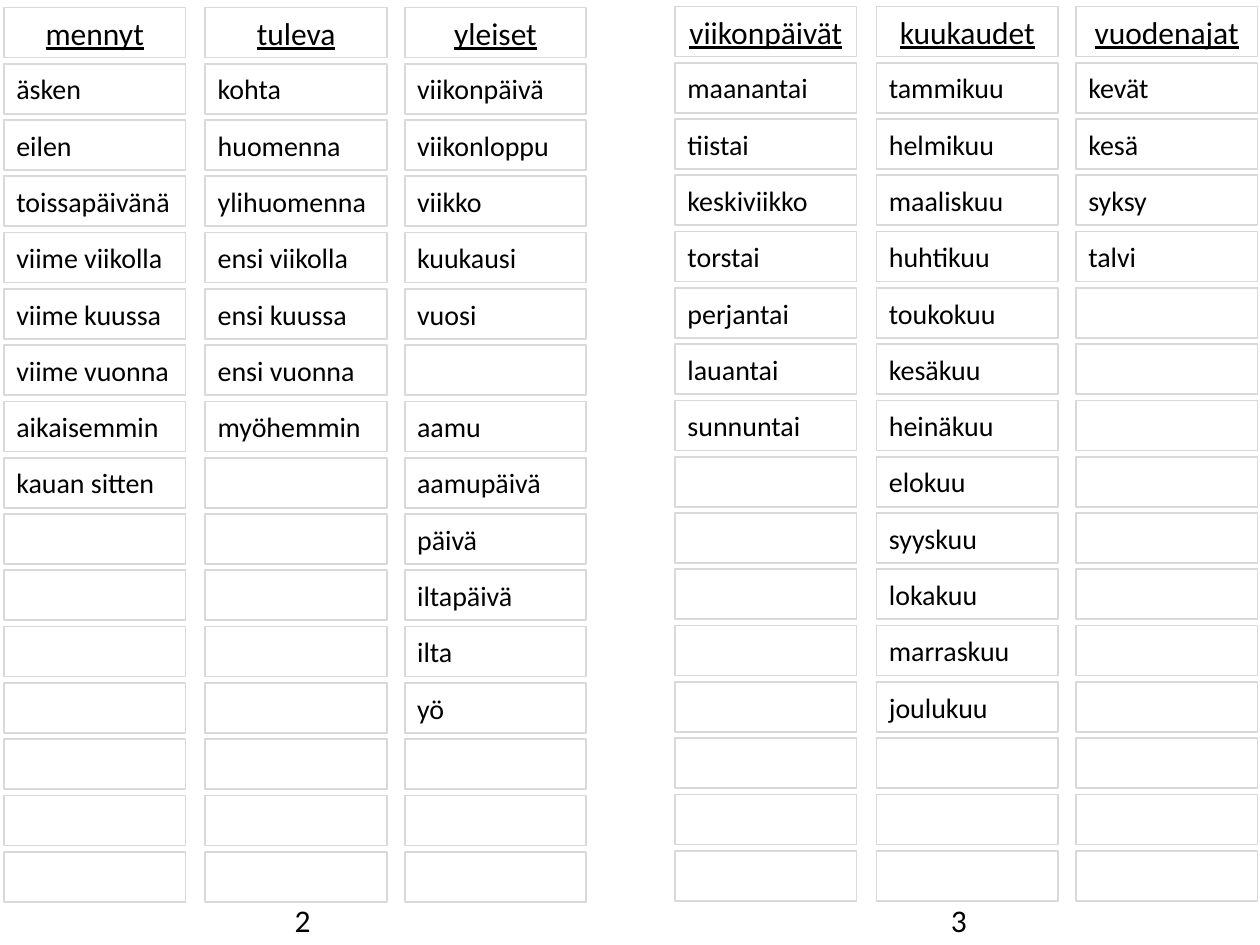
"""Build a Finnish time vocabulary slide as two pages of word cards."""
from pptx import Presentation
from pptx import util as u
from pptx.dml import color
from pptx.enum import shapes, text

ROWS = 16
ROW_PITCH = 17.02 / (ROWS - 1)
CARD_WIDTH, CARD_HEIGHT = 3.66, 1.01
COLUMN_OFFSETS = (0, 4.06, 8.08)
HEADING = {"size": u.Pt(18), "underline": True}
WORD = {"size": u.Pt(16)}
PAGE_NUMBER = {"size": u.Pt(18)}

PAGES = [
    {"left": 0.08, "top": 0.15, "number": "2", "number_left": 5.69, "columns": [
        ["mennyt", "äsken", "eilen", "toissapäivänä", "viime viikolla",
         "viime kuussa", "viime vuonna", "aikaisemmin", "kauan sitten"],
        ["tuleva", "kohta", "huomenna", "ylihuomenna", "ensi viikolla",
         "ensi kuussa", "ensi vuonna", "myöhemmin"],
        ["yleiset", "viikonpäivä", "viikonloppu", "viikko", "kuukausi",
         "vuosi", "", "aamu", "aamupäivä", "päivä", "iltapäivä", "ilta", "yö"],
    ]},
    {"left": 13.61, "top": 0.13, "number": "3", "number_left": 18.92, "columns": [
        ["viikonpäivät", "maanantai", "tiistai", "keskiviikko", "torstai",
         "perjantai", "lauantai", "sunnuntai"],
        ["kuukaudet", "tammikuu", "helmikuu", "maaliskuu", "huhtikuu",
         "toukokuu", "kesäkuu", "heinäkuu", "elokuu", "syyskuu", "lokakuu",
         "marraskuu", "joulukuu"],
        ["vuodenajat", "kevät", "kesä", "syksy", "talvi"],
    ]},
]


def rgb(value):
    """Return a colour from its hex string."""
    return color.RGBColor.from_string(value)


def write(frame, wording, style, alignment):
    """Put one formatted line of text into a frame."""
    line = frame.paragraphs[0]
    line.alignment = alignment
    run = line.add_run()
    run.text = wording
    run.font.color.rgb = rgb("000000")
    for attribute, value in {"name": "Calibri", **style}.items():
        setattr(run.font, attribute, value)


def format_card(card, wording, is_heading):
    """Outline a card and write its word, if it has one."""
    card.fill.background()
    card.line.color.rgb = rgb("D9D9D9")
    card.line.width = u.Pt(1)
    frame = card.text_frame
    frame_format = {"word_wrap": True, "auto_size": text.MSO_AUTO_SIZE.NONE,
                    "vertical_anchor": text.MSO_ANCHOR.MIDDLE}
    for attribute, value in frame_format.items():
        setattr(frame, attribute, value)
    if wording:
        alignment = text.PP_ALIGN.CENTER if is_heading else text.PP_ALIGN.LEFT
        write(frame, wording, HEADING if is_heading else WORD, alignment)


def add_card(slide, left, top):
    """Add an empty rectangular card."""
    card = slide.shapes.add_shape(
        shapes.MSO_SHAPE.RECTANGLE, u.Cm(left), u.Cm(top),
        u.Cm(CARD_WIDTH), u.Cm(CARD_HEIGHT))
    card.shadow.inherit = False
    return card


def place_title(slide, left, top):
    """Move the title placeholder to a card position."""
    title = slide.shapes.title
    place = {"left": left, "top": top, "width": CARD_WIDTH, "height": CARD_HEIGHT}
    for attribute, value in place.items():
        setattr(title, attribute, u.Cm(value))
    return title


def add_column(slide, words, left, top, has_title):
    """Stack a heading card, word cards and blank cards."""
    for row in range(ROWS):
        place_card = place_title if has_title and row == 0 else add_card
        card = place_card(slide, left, top + row * ROW_PITCH)
        format_card(card, words[row] if row < len(words) else "", row == 0)


def add_page_number(slide, number, left):
    """Add a page number below the cards."""
    box = slide.shapes.add_textbox(u.Cm(left), u.Cm(18.03), u.Cm(0.9), u.Cm(1.02))
    box.text_frame.word_wrap = True
    write(box.text_frame, number, PAGE_NUMBER, text.PP_ALIGN.LEFT)


def main():
    """Build and save the slide."""
    deck = Presentation()
    deck.slide_width, deck.slide_height = u.Cm(25.4), u.Cm(19.05)
    slide = deck.slides.add_slide(deck.slide_layouts.get_by_name("Title Only"))
    for page_index, page in enumerate(PAGES):
        add_page_number(slide, page["number"], page["number_left"])
        for column_index, words in enumerate(page["columns"]):
            add_column(slide, words, page["left"] + COLUMN_OFFSETS[column_index],
                       page["top"], page_index == column_index == 0)
    deck.save("out.pptx")


if __name__ == "__main__":
    main()
